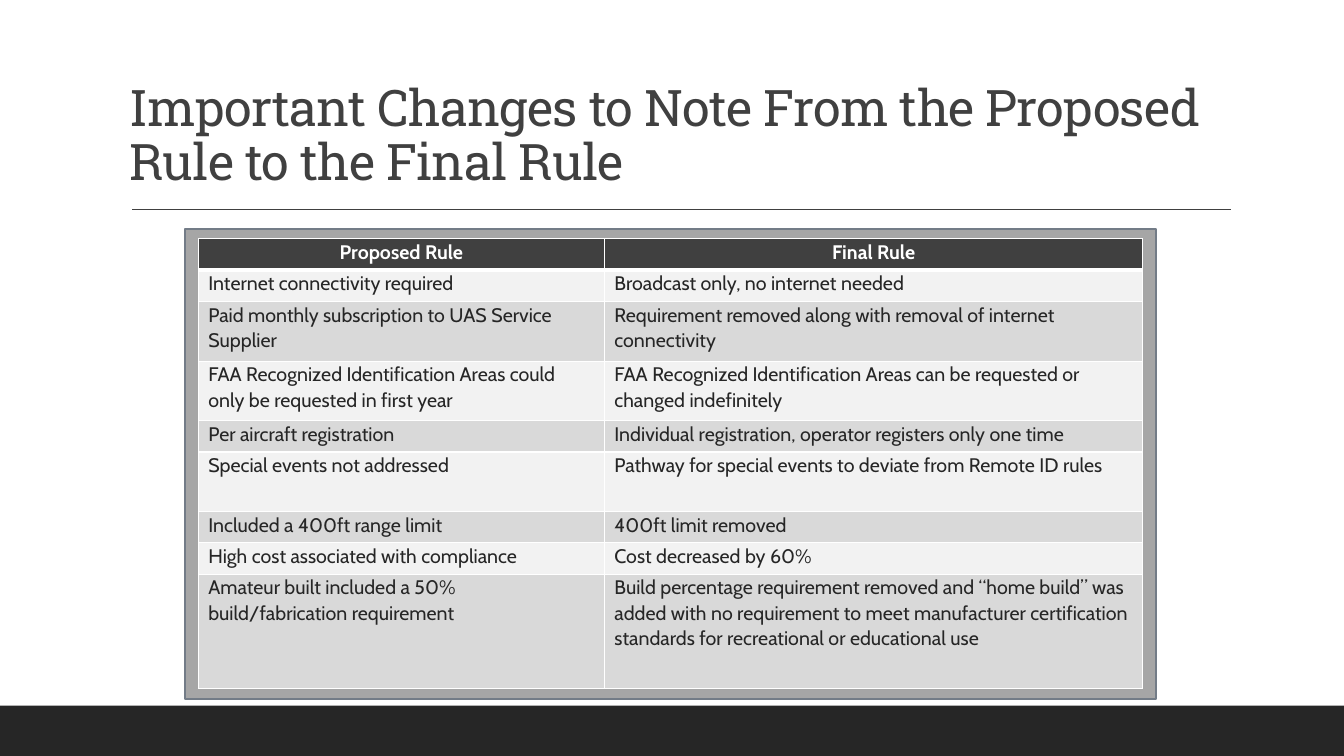
from lxml import etree
from pptx import Presentation
from pptx.dml.color import RGBColor
from pptx.enum.shapes import MSO_CONNECTOR, MSO_SHAPE
from pptx.enum.text import MSO_ANCHOR, MSO_AUTO_SIZE, PP_ALIGN
from pptx.oxml.ns import qn
from pptx.util import Cm, Pt

RECTANGLE, STRAIGHT = MSO_SHAPE.RECTANGLE, MSO_CONNECTOR.STRAIGHT
LEFT, CENTER = PP_ALIGN.LEFT, PP_ALIGN.CENTER
BOTTOM, NO_AUTOFIT = MSO_ANCHOR.BOTTOM, MSO_AUTO_SIZE.NONE
TITLE_ONLY = 5

COLORS = {
    "white": "FFFFFF", "ink": "262626", "charcoal": "404040",
    "frame": "A6A6A6", "frame_edge": "737C87",
    "light_row": "F2F2F2", "dark_row": "D9D9D9",
}
SLIDE_WIDTH, SLIDE_HEIGHT = 33.87, 19.05
TITLE_TEXT = "Important Changes to Note From the Proposed Rule to the Final Rule"

# Row height in cm, proposed rule, final rule
RULE_ROWS = [
    (0.79, "Proposed Rule", "Final Rule"),
    (0.79, "Internet connectivity required", "Broadcast only, no internet needed"),
    (1.5, "Paid monthly subscription to UAS Service Supplier",
     "Requirement removed along with removal of internet connectivity"),
    (1.5, "FAA Recognized Identification Areas could only be requested in first year",
     "FAA Recognized Identification Areas can be requested or changed indefinitely"),
    (0.79, "Per aircraft registration",
     "Individual registration, operator registers only one time"),
    (1.5, "Special events not addressed",
     "Pathway for special events to deviate from Remote ID rules"),
    (0.79, "Included a 400ft range limit", "400ft limit removed"),
    (0.79, "High cost associated with compliance", "Cost decreased by 60%"),
    (2.87, "Amateur built included a 50% build/fabrication requirement",
     "Build percentage requirement removed and “home build” was added with no "
     "requirement to meet manufacturer certification standards for recreational "
     "or educational use"),
]


def rgb(color):
    return RGBColor.from_string(COLORS[color])


def set_attributes(target, values):
    for name, value in values.items():
        setattr(target, name, value)


def set_font(font, color, **values):
    set_attributes(font, values)
    font.color.rgb = rgb(color)


def add_block(slide, box, fill, edge=None):
    """Add a filled rectangle, outlined only when an edge colour is given."""
    block = slide.shapes.add_shape(RECTANGLE, *map(Cm, box))
    block.shadow.inherit = False
    block.fill.solid()
    block.fill.fore_color.rgb = rgb(fill)
    if edge:
        block.line.color.rgb = rgb(edge)
        block.line.width = Pt(1.25)
    else:
        block.line.fill.background()


def add_title(slide, box):
    left, top, width, height = map(Cm, box)
    title = slide.shapes.title
    set_attributes(title, dict(left=left, top=top, width=width, height=height))
    title.text_frame.text = TITLE_TEXT
    set_attributes(title.text_frame, dict(
        word_wrap=True, auto_size=NO_AUTOFIT, vertical_anchor=BOTTOM))
    heading = title.text_frame.paragraphs[0]
    set_attributes(heading, dict(alignment=LEFT, line_spacing=0.9))
    run = heading.runs[0]
    set_font(run.font, "charcoal", name="Roboto Slab", size=Pt(36))
    run.font._element.set("spc", "-50")


def add_title_rule(slide, left, top, width):
    rule = slide.shapes.add_connector(
        STRAIGHT, Cm(left), Cm(top), Cm(left + width), Cm(top))
    rule.line.color.rgb = rgb("charcoal")
    rule.line.width = Pt(1)
    etree.SubElement(rule._element.spPr, qn("a:effectLst"))


def add_borders(cell, widths):
    """Draw white cell borders; widths maps a side letter to points."""
    properties = cell._tc.get_or_add_tcPr()
    for side, width in widths.items():
        border = etree.SubElement(properties, qn(f"a:ln{side}"), w=str(Pt(width)))
        fill = etree.SubElement(border, qn("a:solidFill"))
        etree.SubElement(fill, qn("a:srgbClr"), val=COLORS["white"])


def format_rule_cell(cell, text, row):
    header = row == 0
    add_borders(cell, {"L": 1, "R": 1, "T": 3 if row == 1 else 1,
                       "B": 3 if header else 1})
    cell.fill.solid()
    cell.fill.fore_color.rgb = rgb(
        "charcoal" if header else "light_row" if row % 2 else "dark_row")
    set_attributes(cell, dict(margin_left=Cm(0.25), margin_right=Cm(0.25),
                              margin_top=0, margin_bottom=0))
    cell.text = text
    paragraph = cell.text_frame.paragraphs[0]
    set_attributes(paragraph, dict(
        alignment=CENTER if header else LEFT, line_spacing=1.07))
    set_font(paragraph.runs[0].font, "white" if header else "ink",
             name="Cabin", size=Pt(14), bold=header)


def add_rule_comparison(slide, box):
    """Place the framed table of proposed and final rules in the box."""
    left, top, width, height = box
    side_gap, top_gap, proposed_share = 0.33, 0.25, 0.43
    add_block(slide, box, "frame", "frame_edge")
    table_width = width - 2 * side_gap
    table = slide.shapes.add_table(
        len(RULE_ROWS), 2, Cm(left + side_gap), Cm(top + top_gap),
        Cm(table_width), Cm(height - 2 * top_gap)).table
    for column, share in zip(table.columns, (proposed_share, 1 - proposed_share)):
        column.width = Cm(table_width * share)
    for row, (row_height, *rules) in enumerate(RULE_ROWS):
        table.rows[row].height = Cm(row_height)
        for column, text in enumerate(rules):
            format_rule_cell(table.cell(row, column), text, row)


def main():
    deck = Presentation()
    set_attributes(deck, dict(slide_width=Cm(SLIDE_WIDTH),
                              slide_height=Cm(SLIDE_HEIGHT)))
    slide = deck.slides.add_slide(deck.slide_layouts[TITLE_ONLY])
    footer_height = 1.27
    add_block(slide, (0, SLIDE_HEIGHT - footer_height, SLIDE_WIDTH, footer_height),
              "ink")
    add_title_rule(slide, 3.33, 5.28, 27.68)
    add_title(slide, (3, 1.7, 27.94, 3.25))
    add_rule_comparison(slide, (4.67, 5.77, 24.46, 11.84))
    deck.save("out.pptx")


if __name__ == "__main__":
    main()
